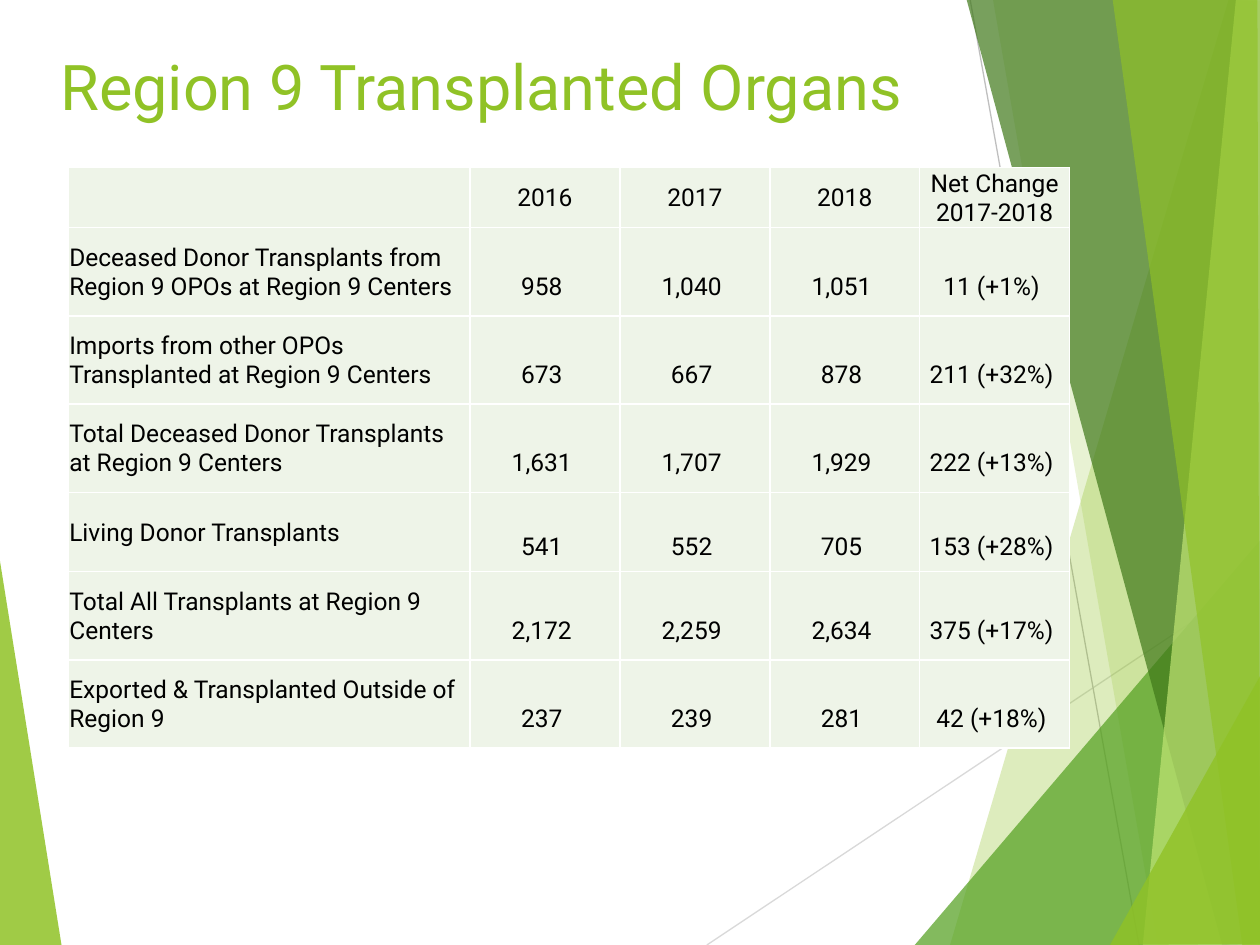
from typing import NamedTuple

from lxml.etree import SubElement
from pptx import Presentation
from pptx.dml.color import RGBColor
from pptx.enum.shapes import MSO_CONNECTOR as Link
from pptx.enum.text import MSO_ANCHOR as Anchor, PP_ALIGN as Align
from pptx.oxml.ns import qn
from pptx.util import Inches, Pt

FONT = "Roboto"
LIME = RGBColor(0x90, 0xC2, 0x26)
GREEN = RGBColor(0x54, 0xA0, 0x21)
DARK = RGBColor(0x3F, 0x78, 0x19)
PALE = RGBColor(0xC0, 0xE4, 0x74)
SILVER = RGBColor(0xD9, 0xD9, 0xD9)
GRAY = RGBColor(0xBF, 0xBF, 0xBF)
MIST = RGBColor(0xEE, 0xF4, 0xE8)
WHITE = RGBColor(0xFF, 0xFF, 0xFF)
BLACK = RGBColor(0, 0, 0)

Point = tuple[float, float]


class Shard(NamedTuple):
    color: RGBColor
    alpha: int  # percent
    points: list[Point]


class Ray(NamedTuple):
    color: RGBColor
    start: Point
    end: Point


class Row(NamedTuple):
    label: str
    values: list[str]
    height: float = 0.7


WEDGE = Shard(LIME, 85, [(-0.01, 4.39), (0.49, 7.51), (-0.01, 7.5)])
RAYS = [
    Ray(SILVER, (5.61, 7.5), (10.01, 4.57)),
    Ray(GRAY, (7.7, 0), (9.04, 7.5)),
]
SHARDS = [
    Shard(LIME, 30, [(9.75, 0), (7.54, 7.5), (10.02, 7.51), (10.01, 0.01)]),
    Shard(LIME, 20, [(7.88, -0.01), (9.19, 7.5), (10.01, 7.5), (10.01, -0.01)]),
    Shard(GREEN, 72, [(7.26, 7.5), (10, 4.29), (10.01, 7.5)]),
    Shard(DARK, 70, [(7.67, -0.01), (9.7, 7.5), (10.01, 7.49), (10.01, -0.01)]),
    Shard(PALE, 70, [(9.81, -0.01), (9.07, 7.5), (10.01, 7.5), (10, -0.01)]),
    Shard(LIME, 65, [(8.83, -0.01), (9.86, 7.5), (10, 7.5), (9.98, -0.01)]),
    Shard(LIME, 80, [(8.81, 7.5), (10.01, 5.35), (10.01, 7.49)]),
]

COLS = [3.19] + [1.19] * 4
ROWS = [
    Row("", ["2016", "2017", "2018", "Net Change 2017-2018"], 0.47),
    Row("Deceased Donor Transplants from Region 9 OPOs at Region 9 Centers",
        ["958", "1,040", "1,051", "11 (+1%)"]),
    Row("Imports from other OPOs Transplanted at Region 9 Centers",
        ["673", "667", "878", "211 (+32%)"]),
    Row("Total Deceased Donor Transplants at Region 9 Centers",
        ["1,631", "1,707", "1,929", "222 (+13%)"]),
    Row("Living Donor Transplants",
        ["541", "552", "705", "153 (+28%)"], 0.63),
    Row("Total All Transplants at Region 9 Centers",
        ["2,172", "2,259", "2,634", "375 (+17%)"]),
    Row("Exported & Transplanted Outside of Region 9",
        ["237", "239", "281", "42 (+18%)"]),
]


def draw_shard(slide, shard: Shard) -> None:
    first, *rest = [(Inches(x), Inches(y)) for x, y in shard.points]
    pen = slide.shapes.build_freeform(*first)
    pen.add_line_segments(rest, close=True)
    shape = pen.convert_to_shape()
    shape.shadow.inherit = False
    shape.line.fill.background()
    shape.fill.solid()
    shape.fill.fore_color.rgb = shard.color
    tint = shape.fill._xPr.find(".//" + qn("a:srgbClr"))
    SubElement(tint, qn("a:alpha"), val=str(shard.alpha * 1000))


def draw_ray(slide, ray: Ray) -> None:
    ends = [Inches(n) for n in ray.start + ray.end]
    line = slide.shapes.add_connector(Link.STRAIGHT, *ends)
    line.line.color.rgb = ray.color
    line.line.width = Pt(0.75)
    SubElement(line._element.spPr, qn("a:effectLst"))


def style_text(para, size: float, color: RGBColor) -> None:
    for run in para.runs:
        run.font.name = FONT
        run.font.size = Pt(size)
        run.font.color.rgb = color


def draw_title(slide, text: str) -> None:
    box = slide.shapes.add_textbox(
        Inches(0.38), Inches(0.33), Inches(6.94), Inches(1.44))
    box.text_frame.word_wrap = True
    box.text_frame.text = text
    style_text(box.text_frame.paragraphs[0], 36, LIME)


def add_edges(cell) -> None:
    props = cell._tc.get_or_add_tcPr()
    for spot, side in enumerate(("a:lnL", "a:lnR", "a:lnT", "a:lnB")):
        edge = props.makeelement(qn(side), {"w": str(Pt(1))})
        fill = SubElement(edge, qn("a:solidFill"))
        SubElement(fill, qn("a:srgbClr"), val=str(WHITE))
        props.insert(spot, edge)


def fill_cell(cell, text: str, is_label: bool, is_head: bool) -> None:
    cell.fill.solid()
    cell.fill.fore_color.rgb = MIST
    add_edges(cell)
    cell.vertical_anchor = Anchor.MIDDLE
    cell.margin_left = cell.margin_right = cell.margin_top = Inches(0.01)
    cell.margin_bottom = 0
    para = cell.text_frame.paragraphs[0]
    para.text = text
    para.font.size = Pt(14)
    style_text(para, 14, BLACK)
    if not is_label:
        para.alignment = Align.CENTER
        if not is_head:
            # Figures sit level with the second line of the label
            cell.margin_top = Inches(0.24)
            cell.margin_right = Inches(0.06)


def draw_table(slide) -> None:
    frame = slide.shapes.add_table(
        len(ROWS), len(COLS), Inches(0.54), Inches(1.33),
        Inches(sum(COLS)), Inches(sum(row.height for row in ROWS)))
    table = frame.table
    for col, width in zip(table.columns, COLS):
        col.width = Inches(width)
    for r, row in enumerate(ROWS):
        table.rows[r].height = Inches(row.height)
        for c, text in enumerate([row.label] + row.values):
            fill_cell(table.cell(r, c), text, c == 0, r == 0)


def main() -> None:
    deck = Presentation()
    deck.slide_width, deck.slide_height = Inches(10), Inches(7.5)
    slide = deck.slides.add_slide(deck.slide_layouts[6])

    # Backdrop
    draw_shard(slide, WEDGE)
    for ray in RAYS:
        draw_ray(slide, ray)
    for shard in SHARDS:
        draw_shard(slide, shard)

    # Content
    draw_title(slide, "Region 9 Transplanted Organs")
    draw_table(slide)
    deck.save("out.pptx")


if __name__ == "__main__":
    main()
